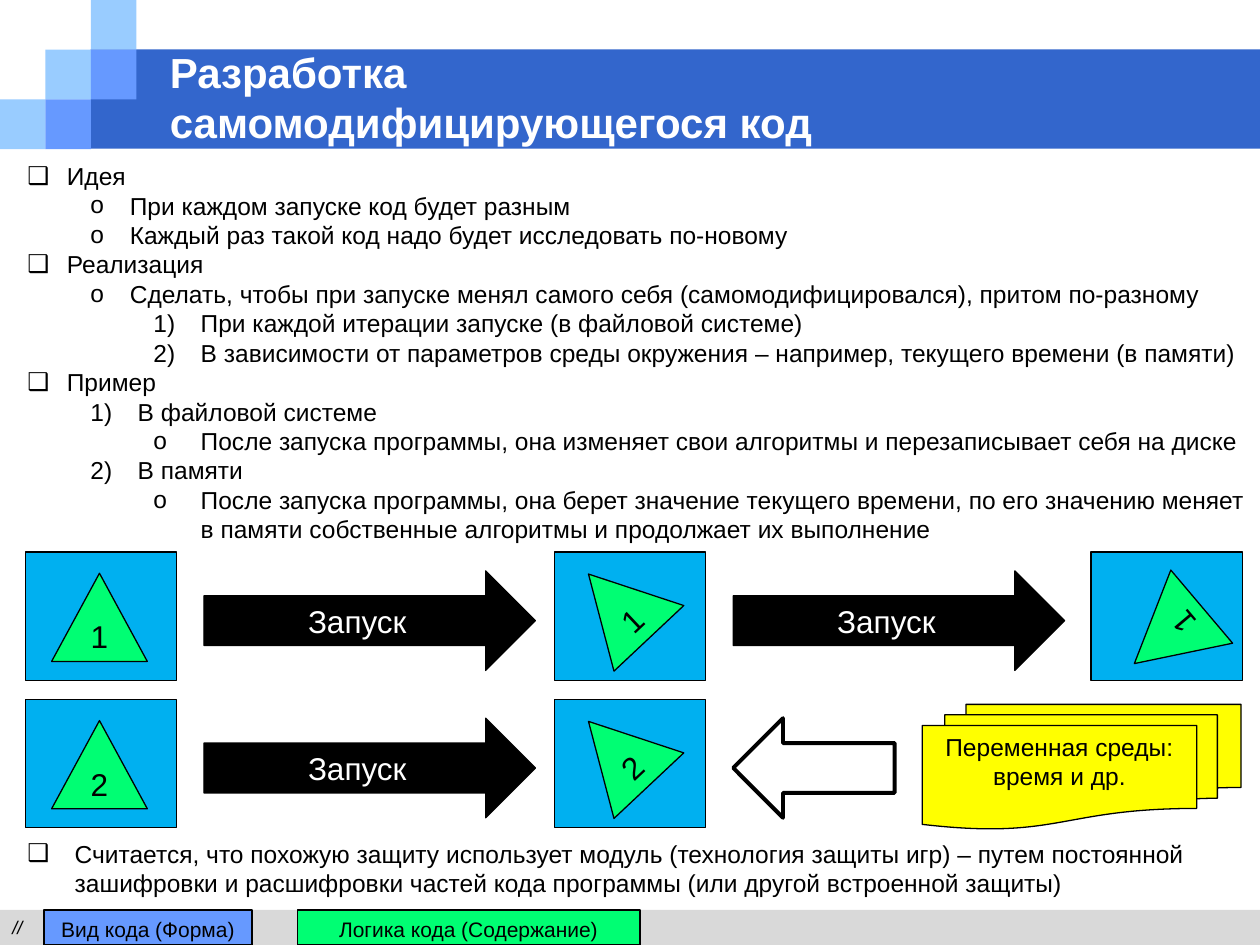
from dataclasses import dataclass
from typing import Optional

import pptx
import pptx.dml.color
import pptx.enum.shapes
import pptx.enum.text
import pptx.util
from lxml import etree

Pt = pptx.util.Pt
RGB = pptx.dml.color.RGBColor
Shape = pptx.enum.shapes.MSO_SHAPE
Align = pptx.enum.text.PP_ALIGN
Anchor = pptx.enum.text.MSO_ANCHOR

FONT = "Arial"
BLACK = RGB(0x00, 0x00, 0x00)
WHITE = RGB(0xFF, 0xFF, 0xFF)
BANNER_BLUE = RGB(0x33, 0x66, 0xCC)
PALE_BLUE = RGB(0x99, 0xCC, 0xFF)
FORM_BLUE = RGB(0x66, 0x99, 0xFF)
PANEL_BLUE = RGB(0x00, 0xB0, 0xF0)
LOGIC_GREEN = RGB(0x00, 0xFE, 0x73)
YELLOW = RGB(0xFF, 0xFF, 0x00)
GREY = RGB(0xD9, 0xD9, 0xD9)

BOX, RING, NUMBER = "❑", "o", "1)"


@dataclass
class Block:
    kind: Shape
    left: float
    top: float
    width: float
    height: float
    fill: RGB
    line: Optional[float] = 0.75
    lines: tuple[str, ...] = ()
    size: float = 18
    color: RGB = BLACK
    align: Align = Align.CENTER
    anchor: Anchor = Anchor.TOP
    italic: bool = False
    rotation: float = 0


@dataclass
class Item:
    level: int
    bullet: str
    margin: float
    hanging: float
    text: str


@dataclass
class Stage:
    column: int
    row: int
    number: str
    pose: tuple[float, float, float]  # offset x, offset y, rotation


def style(paragraph, size: float, color: RGB, bold=None, italic=None) -> None:
    font = paragraph.font
    font.name, font.size = FONT, Pt(size)
    font.bold, font.italic = bold, italic
    font.color.rgb = color


def draw_block(slide, block: Block) -> None:
    shape = slide.shapes.add_shape(
        block.kind, Pt(block.left), Pt(block.top), Pt(block.width), Pt(block.height))
    shape.shadow.inherit = False
    shape.rotation = block.rotation
    shape.fill.solid()
    shape.fill.fore_color.rgb = block.fill
    if block.line is None:
        shape.line.fill.background()
    else:
        shape.line.color.rgb = BLACK
        shape.line.width = Pt(block.line)
    frame = shape.text_frame
    frame.vertical_anchor = block.anchor
    for index, text in enumerate(block.lines):
        paragraph = frame.add_paragraph() if index else frame.paragraphs[0]
        paragraph.text = text
        paragraph.alignment = block.align
        style(paragraph, block.size, block.color, italic=block.italic)


def add_text(slide, left: float, top: float, width: float, height: float):
    frame = slide.shapes.add_textbox(Pt(left), Pt(top), Pt(width), Pt(height)).text_frame
    frame.word_wrap = True
    return frame


def set_bullet(paragraph, item: Item) -> None:
    properties = paragraph._p.get_or_add_pPr()
    properties.set("marL", str(Pt(item.margin)))
    properties.set("indent", str(-Pt(item.hanging)))
    namespace = "{" + properties.nsmap["a"] + "}"
    etree.SubElement(properties, namespace + "buFont", typeface=FONT)
    if item.bullet == NUMBER:
        etree.SubElement(properties, namespace + "buAutoNum", type="arabicParenR")
    else:
        etree.SubElement(properties, namespace + "buChar", char=item.bullet)


def draw_list(slide, top: float, height: float, items: list[Item]) -> None:
    frame = add_text(slide, 8.6, top, 711.4, height)
    for index, item in enumerate(items):
        paragraph = frame.add_paragraph() if index else frame.paragraphs[0]
        paragraph.text = item.text
        paragraph.level = item.level
        set_bullet(paragraph, item)
        style(paragraph, 14, BLACK)


def heading(text: str) -> Item:
    return Item(0, BOX, 22.5, 22.5, text)


def point(text: str) -> Item:
    return Item(1, RING, 58.5, 22.5, text)


def case(text: str) -> Item:
    return Item(1, NUMBER, 63, 27, text)


def detail(bullet: str, text: str) -> Item:
    return Item(2, bullet, 99, 27, text)


# Diagram grid
COLUMNS = (14.4, 316.8, 623.5)
ROWS = (315.4, 399.6)
ARROW_SHIFT_X, ARROW_SHIFT_Y = 102.2, 10.8
ARROW_HEIGHT = 56.9
UPRIGHT, TURNED, FLIPPED = (15.1, 12.2, 0), (9.4, 5.8, 316.8), (16.6, 22.3, 229.8)

STAGES = [
    Stage(0, 0, "1", UPRIGHT), Stage(1, 0, "1", TURNED), Stage(2, 0, "1", FLIPPED),
    Stage(0, 1, "2", UPRIGHT), Stage(1, 1, "2", TURNED),
]
LAUNCHES = [(0, 0), (1, 0), (0, 1)]  # column and row of the panel before each arrow

EXPLANATION = [
    heading("Идея"),
    point("При каждом запуске код будет разным"),
    point("Каждый раз такой код надо будет исследовать по-новому"),
    heading("Реализация"),
    point("Сделать, чтобы при запуске менял самого себя (самомодифицировался), притом по-разному"),
    detail(NUMBER, "При каждой итерации запуске (в файловой системе)"),
    detail(NUMBER, "В зависимости от параметров среды окружения – например, текущего времени (в памяти)"),
    heading("Пример"),
    case("В файловой системе"),
    detail(RING, "После запуска программы, она изменяет свои алгоритмы и перезаписывает себя на диске"),
    case("В памяти"),
    detail(RING, "После запуска программы, она берет значение текущего времени, по его значению меняет "
                 "в памяти собственные алгоритмы и продолжает их выполнение"),
]
REMARK = [Item(0, BOX, 27, 27,
               "Считается, что похожую защиту использует модуль (технология защиты игр) – путем постоянной "
               "зашифровки и расшифровки частей кода программы (или другой встроенной защиты)")]


def main() -> None:
    deck = pptx.Presentation()
    deck.slide_width, deck.slide_height = Pt(720), Pt(540)
    slide = deck.slides.add_slide(deck.slide_layouts[6])

    # Banner with its staircase of squares
    draw_block(slide, Block(Shape.RECTANGLE, 51.8, 28.3, 668.2, 56.7, BANNER_BLUE, None))
    step_x, step_y = 26, 28.4
    for column, row, fill in [(0, 2, PALE_BLUE), (1, 1, PALE_BLUE), (2, 0, PALE_BLUE),
                              (2, 1, FORM_BLUE), (1, 2, FORM_BLUE)]:
        draw_block(slide, Block(Shape.RECTANGLE, column * step_x, row * step_y,
                                step_x, step_y, fill, None))

    # Title
    title = add_text(slide, 90, 36, 581.8, 38.2)
    title.vertical_anchor = Anchor.MIDDLE
    title.text = "Разработка\vсамомодифицирующегося код"
    style(title.paragraphs[0], 24, WHITE, bold=True)

    # Explanation and closing remark
    draw_list(slide, 88.6, 225, EXPLANATION)
    draw_list(slide, 475.7, 41, REMARK)

    # Code panels, each with a triangle for its logic
    for stage in STAGES:
        left, top = COLUMNS[stage.column], ROWS[stage.row]
        shift_x, shift_y, rotation = stage.pose
        draw_block(slide, Block(Shape.RECTANGLE, left, top, 86.4, 73.4, PANEL_BLUE))
        draw_block(slide, Block(Shape.ISOSCELES_TRIANGLE, left + shift_x, top + shift_y,
                                54.7, 50.4, LOGIC_GREEN, lines=(stage.number,),
                                anchor=Anchor.BOTTOM, rotation=rotation))

    # Launch arrows
    for column, row in LAUNCHES:
        draw_block(slide, Block(Shape.RIGHT_ARROW, COLUMNS[column] + ARROW_SHIFT_X,
                                ROWS[row] + ARROW_SHIFT_Y, 189.4, ARROW_HEIGHT, BLACK,
                                lines=("Запуск",), color=WHITE))

    # Environment variables feeding the second program
    draw_block(slide, Block(Shape.FLOWCHART_MULTIDOCUMENT, 527, 402.5, 182.2, 71.3, YELLOW,
                            lines=("Переменная среды:", "время и др."), size=14))
    draw_block(slide, Block(Shape.LEFT_ARROW, COLUMNS[1] + ARROW_SHIFT_X,
                            ROWS[1] + ARROW_SHIFT_Y, 92.2, ARROW_HEIGHT, WHITE, 2.25))

    # Footer legend
    footer_top, footer_height = 520, 20
    draw_block(slide, Block(Shape.RECTANGLE, 0, footer_top, 720, footer_height, GREY, None,
                            ("//",), 10.5, align=Align.LEFT, italic=True))
    for left, width, fill, label in [(25.2, 118.8, FORM_BLUE, "Вид кода (Форма)"),
                                     (169.9, 195.8, LOGIC_GREEN, "Логика кода (Содержание)")]:
        draw_block(slide, Block(Shape.RECTANGLE, left, footer_top, width, footer_height, fill,
                                lines=(label,), size=12))

    deck.save("out.pptx")


if __name__ == "__main__":
    main()
